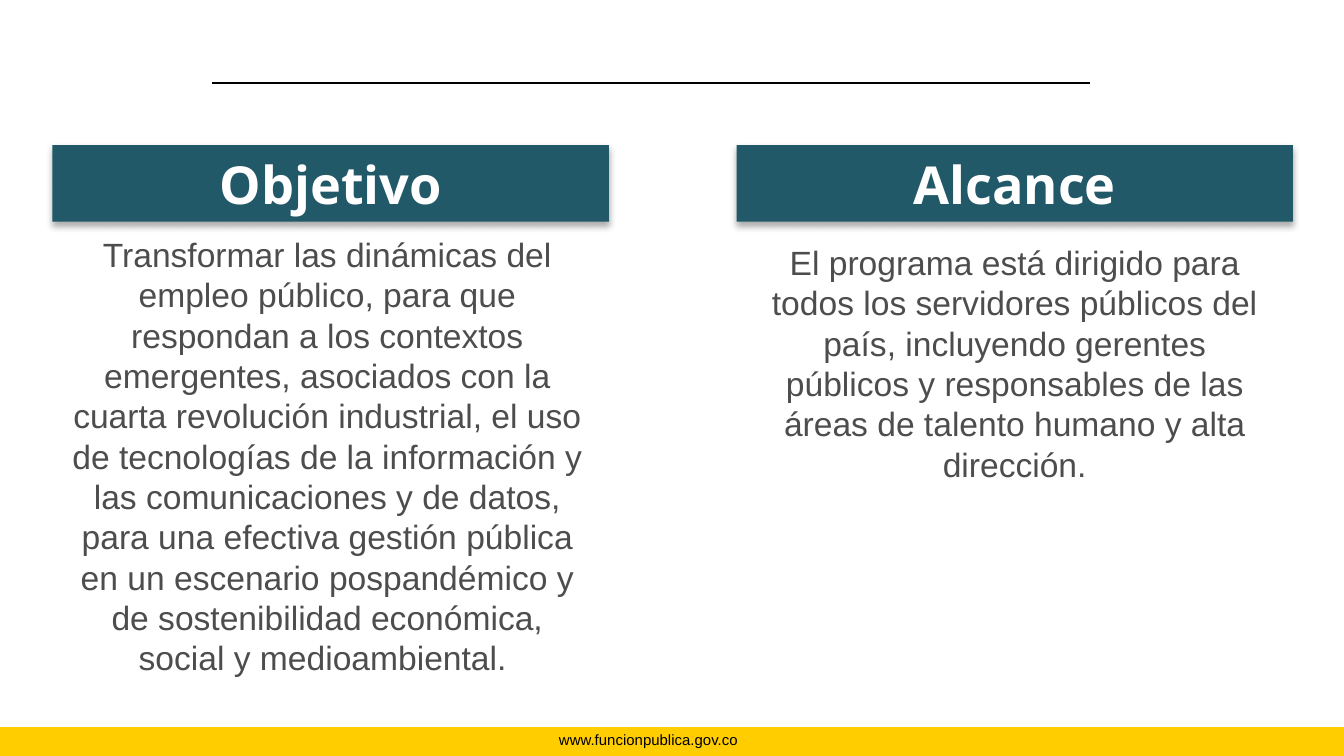
from dataclasses import dataclass

from lxml.etree import SubElement
from pptx import Presentation
from pptx.dml.color import RGBColor
from pptx.enum.shapes import MSO_CONNECTOR as Connector, MSO_SHAPE as Shape
from pptx.enum.text import MSO_ANCHOR as Anchor, MSO_AUTO_SIZE as AutoSize, PP_ALIGN as Align
from pptx.oxml.ns import qn
from pptx.util import Inches, Pt


@dataclass(frozen=True)
class Theme:
    heading_fill: str = "215968"
    heading_text: str = "FFFFFF"
    body_text: str = "4D4D4D"
    band: str = "FFCD00"
    ink: str = "000000"
    heading_font: str = "Open Sans"
    body_font: str = "Arial"
    heading_size: int = 28
    body_size: int = 18
    footer_size: int = 8


THEME = Theme()
SLIDE_WIDTH = 10
SLIDE_HEIGHT = SLIDE_WIDTH * 9 / 16
COLUMN_TOP, COLUMN_WIDTH, HEADING_HEIGHT = 1.08, 4.14, 0.57


def color(value):
    return RGBColor.from_string(value)


def place(shape, left, top, width, height):
    shape.left, shape.top = Inches(left), Inches(top)
    shape.width, shape.height = Inches(width), Inches(height)


def write(shape, text, *, size, ink, font, bold=False, anchor=Anchor.TOP):
    frame = shape.text_frame
    frame.word_wrap = True
    frame.auto_size = AutoSize.NONE
    frame.vertical_anchor = anchor
    paragraph = frame.paragraphs[0]
    paragraph.text = text
    paragraph.alignment = Align.CENTER
    paragraph.space_before = Pt(0)
    properties = paragraph._p.get_or_add_pPr()
    properties.set("marL", "0")
    properties.set("indent", "0")
    SubElement(properties, qn("a:buNone"))
    style = paragraph.font
    style.name, style.size, style.bold = font, Pt(size), bold
    style.color.rgb = color(ink)


def drop_shadow(shape):
    effects = SubElement(shape._element.spPr, qn("a:effectLst"))
    shadow = SubElement(effects, qn("a:outerShdw"), blurRad=str(Pt(3.5)),
                        dist=str(Pt(2.2)), dir="5400000", rotWithShape="0")
    shade = SubElement(shadow, qn("a:srgbClr"), val=THEME.ink)
    SubElement(shade, qn("a:alpha"), val="32000")


def draw_rule(slide, left, top, width):
    rule = slide.shapes.add_connector(Connector.STRAIGHT, Inches(left), Inches(top),
                                      Inches(left + width), Inches(top))
    rule.line.color.rgb = color(THEME.ink)
    rule.line.width = Pt(1)
    SubElement(rule._element.spPr, qn("a:effectLst"))


def draw_footer(slide, left, top, width, height):
    band = slide.shapes.add_shape(Shape.RECTANGLE, Inches(left), Inches(top),
                                  Inches(width), Inches(height))
    band.shadow.inherit = False
    band.fill.solid()
    band.fill.fore_color.rgb = color(THEME.band)
    band.line.fill.background()
    address = slide.shapes.add_textbox(Inches(left + 3.63), Inches(top - 0.02),
                                       Inches(2.39), Inches(0.24))
    write(address, "www.funcionpublica.gov.co", size=THEME.footer_size,
          ink=THEME.ink, font=THEME.body_font)


def fill_column(heading, body, box, title, text, body_box):
    left, top, width, height = box
    inset, drop, body_width, body_height = body_box
    place(body, left + inset, top + drop, body_width, body_height)
    write(body, text, size=THEME.body_size, ink=THEME.body_text, font=THEME.body_font)
    place(heading, left, top, width, height)
    heading.fill.solid()
    heading.fill.fore_color.rgb = color(THEME.heading_fill)
    drop_shadow(heading)
    write(heading, title, size=THEME.heading_size, ink=THEME.heading_text,
          font=THEME.heading_font, bold=True, anchor=Anchor.MIDDLE)


COLUMNS = [
    (0.39, "Objetivo",
     "Transformar las dinámicas del empleo público, para que respondan a los contextos "
     "emergentes, asociados con la cuarta revolución industrial, el uso de tecnologías de "
     "la información y las comunicaciones y de datos, para una efectiva gestión pública en "
     "un escenario pospandémico y de sostenibilidad económica, social y medioambiental. ",
     (0, 0.61, 4.09, 3.43)),
    (5.48, "Alcance",
     "El programa está dirigido para todos los servidores públicos del país, incluyendo "
     "gerentes públicos y responsables de las áreas de talento humano y alta dirección.",
     (0.09, 0.67, 3.96, 1.92)),
]


def main():
    deck = Presentation()
    deck.slide_width, deck.slide_height = Inches(SLIDE_WIDTH), Inches(SLIDE_HEIGHT)
    slide = deck.slides.add_slide(deck.slide_layouts.get_by_name("Comparison"))
    unused_title, *parts = slide.placeholders
    unused_title._element.getparent().remove(unused_title._element)

    draw_footer(slide, 0, 5.41, SLIDE_WIDTH, SLIDE_HEIGHT - 5.41)
    draw_rule(slide, 1.58, 0.62, 6.53)
    for heading, body, (left, title, text, body_box) in zip(parts[::2], parts[1::2], COLUMNS):
        fill_column(heading, body, (left, COLUMN_TOP, COLUMN_WIDTH, HEADING_HEIGHT),
                    title, text, body_box)
    deck.save("out.pptx")


if __name__ == "__main__":
    main()
